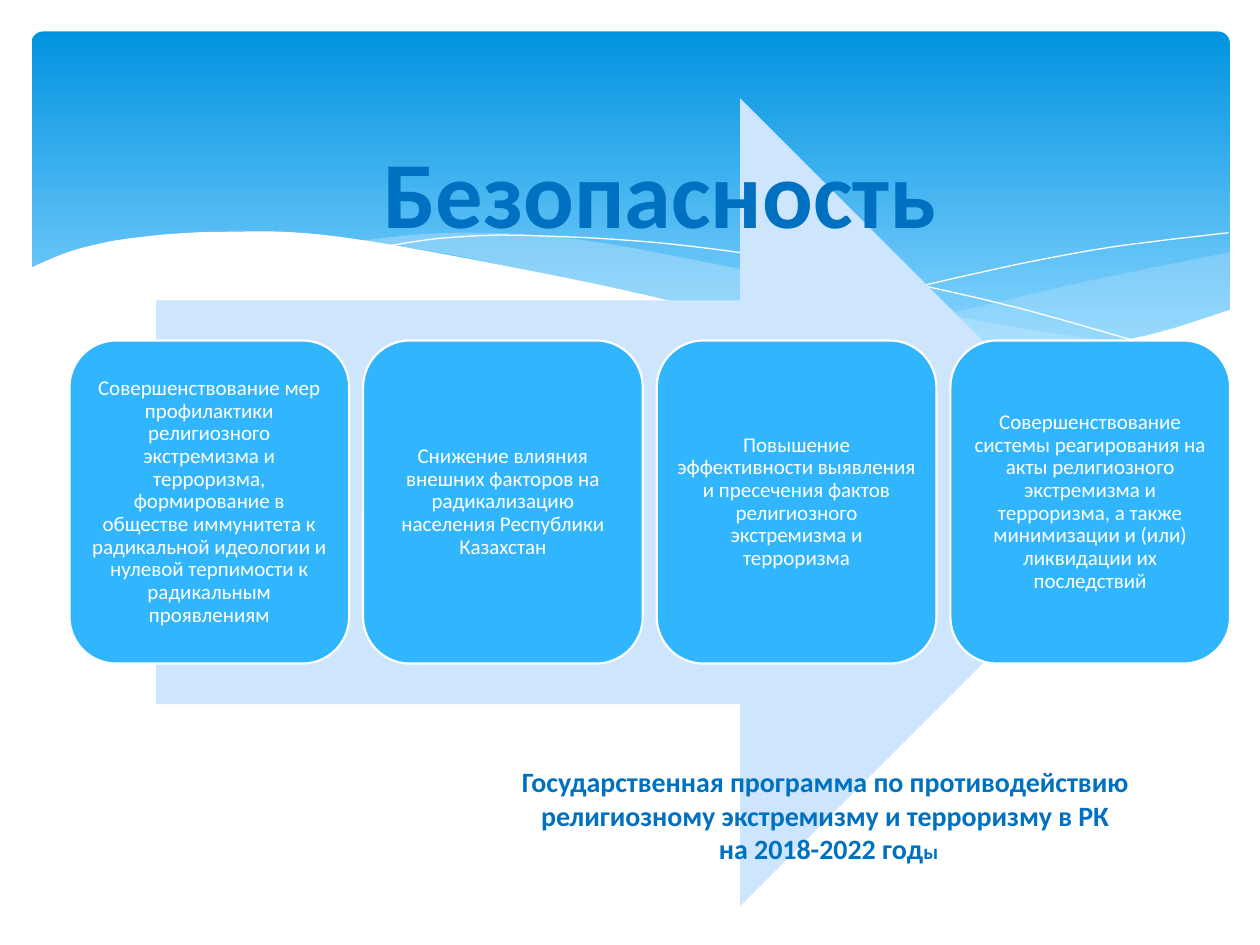
"""Build the slide on security measures: wave banner, arrow with four goals, programme name."""
from lxml import etree
from pptx import Presentation
from pptx.dml.color import RGBColor
from pptx.enum.shapes import MSO_SHAPE
from pptx.enum.text import MSO_ANCHOR, PP_ALIGN
from pptx.oxml.ns import qn
from pptx.util import Pt

ROUNDED = MSO_SHAPE.ROUNDED_RECTANGLE
ARROW = MSO_SHAPE.RIGHT_ARROW
MIDDLE = MSO_ANCHOR.MIDDLE
CENTER = PP_ALIGN.CENTER
WHITE, TEXT_BLUE, CARD_BLUE, ARROW_BLUE, WAVE_BLUE = "FFFFFF", "0070C0", "31B6FD", "CEE5FE", "C6E7FC"
BANNER_TOP, BANNER_BOTTOM = "0293E0", "83D3FE"
STEPS = 8
UNITS_PER_POINT = 10

color = RGBColor.from_string


def smooth_edge(knots):
    """Return a Catmull-Rom curve through the knots, in tenths of a point."""
    padded = [knots[0], *knots, knots[-1]]
    curve = [knots[0]]
    for before, start, end, after in zip(padded, padded[1:], padded[2:], padded[3:]):
        for step in range(1, STEPS + 1):
            t = step / STEPS
            curve.append([
                b + ((c - a) * t + (2 * a - 5 * b + 4 * c - d) * t**2 + (3 * b - a - 3 * c + d) * t**3) / 2
                for a, b, c, d in zip(before, start, end, after)])
    return [(round(x * UNITS_PER_POINT), round(y * UNITS_PER_POINT)) for x, y in curve]


def write_lines(frame, lines, hue, bold):
    """Fill a text frame with centred lines, each a list of (text, size) runs."""
    for index, pieces in enumerate(lines):
        paragraph = frame.add_paragraph() if index else frame.paragraphs[0]
        paragraph.alignment = CENTER
        for text, size in pieces:
            run = paragraph.add_run()
            run.text = text
            run.font.name = "Calibri"
            run.font.size = Pt(size)
            run.font.bold = bold
            run.font.color.rgb = color(hue)


prs = Presentation()
prs.slide_width, prs.slide_height = Pt(720), Pt(540)
slide = prs.slides.add_slide(prs.slide_layouts[6])
shapes = slide.shapes

banner = shapes.add_shape(ROUNDED, Pt(18), Pt(18), Pt(684.7), Pt(194.4))
banner.adjustments[0] = 0.034
banner.shadow.inherit = False
banner.line.fill.background()
banner.fill.gradient()
banner.fill.gradient_angle = 270
for stop, position, hue in zip(banner.fill.gradient_stops, (0, 0.9), (BANNER_TOP, BANNER_BOTTOM)):
    stop.position = position
    stop.color.rgb = color(hue)

right_top = [(703, 144), (620, 161), (542, 179), (476, 191)]
right_bottom = [(476, 191), (536, 198), (586, 200), (640, 196), (703, 178)]
middle_top = [(206, 137.5), (260, 133), (335, 137.5), (453, 160), (558, 183), (643, 196.5)]
middle_bottom = [(643, 196.5), (589, 200), (510, 196), (407, 178.5), (323, 160), (261, 146), (206, 137.5)]
falling_line = [(222, 140.5), (254, 136), (300, 134.5), (384, 139.5), (479, 153.5), (572, 173.5), (653, 196)]
rising_line = [(441, 185), (539, 160.5), (624, 143), (702, 133)]
white_crest = [
    (16.5, 153.5), (42.5, 143), (76, 136), (127, 132.5), (195, 135.5), (322, 158.5),
    (434, 183), (510, 194.5), (582, 199.5), (647, 193.5), (703.5, 177)]
white_base = [(703.5, 237), (16.5, 237)]

filled_waves = [
    ([right_top, right_bottom], WAVE_BLUE, 29),
    ([middle_top, middle_bottom], WAVE_BLUE, 40),
]
hairlines = [([falling_line], WHITE, 0), ([rising_line], WHITE, 0)]
white_ground = [([white_crest, white_base], WHITE, 100)]

for edges, hue, opacity in filled_waves + hairlines + white_ground:
    outline = [point for edge in edges for point in smooth_edge(edge)]
    builder = shapes.build_freeform(*outline[0], scale=Pt(1) / UNITS_PER_POINT)
    builder.add_line_segments(outline[1:], close=opacity > 0)
    wave = builder.convert_to_shape()
    wave.shadow.inherit = False
    if opacity:
        wave.line.fill.background()
        wave.fill.solid()
        wave.fill.fore_color.rgb = color(hue)
        tint = wave.element.spPr.find(qn("a:solidFill")).find(qn("a:srgbClr"))
        etree.SubElement(tint, qn("a:alpha"), val=str(opacity * 1000))
    else:
        wave.fill.background()
        wave.line.color.rgb = color(hue)
        wave.line.width = Pt(0)

arrow = shapes.add_shape(ARROW, Pt(89.3), Pt(56.2), Pt(564.5), Pt(461.5))
arrow.shadow.inherit = False
arrow.line.fill.background()
arrow.fill.solid()
arrow.fill.fore_color.rgb = color(ARROW_BLUE)

goals = [
    "Совершенствование мер профилактики религиозного экстремизма и терроризма, формирование "
    "в обществе иммунитета к радикальной идеологии и нулевой терпимости к радикальным проявлениям",
    "Снижение влияния внешних факторов на радикализацию населения Республики Казахстан",
    "Повышение эффективности выявления и пресечения фактов религиозного экстремизма и терроризма",
    "Совершенствование системы реагирования на акты религиозного экстремизма и терроризма, "
    "а также минимизации и (или) ликвидации их последствий",
]
cards_left, card_width, card_gap = 39.7, 159.8, 8
for index, goal in enumerate(goals):
    left = cards_left + index * (card_width + card_gap)
    card = shapes.add_shape(ROUNDED, Pt(left), Pt(194.6), Pt(card_width), Pt(184.6))
    card.shadow.inherit = False
    card.fill.solid()
    card.fill.fore_color.rgb = color(CARD_BLUE)
    card.line.color.rgb = color(WHITE)
    card.line.width = Pt(1.25)
    frame = card.text_frame
    frame.word_wrap = True
    frame.vertical_anchor = MIDDLE
    frame.margin_left = frame.margin_right = frame.margin_top = frame.margin_bottom = Pt(3.6)
    write_lines(frame, [[(goal, 12)]], WHITE, False)
    frame.paragraphs[0].line_spacing = 0.9
    frame.paragraphs[0].space_after = Pt(4.2)

title = shapes.add_textbox(Pt(163), Pt(73.2), Pt(428.4), Pt(72.7)).text_frame
title.word_wrap = False
write_lines(title, [[("Безопасность", 54)]], TEXT_BLUE, True)

programme = shapes.add_textbox(Pt(236.2), Pt(433.4), Pt(474.5), Pt(65.5)).text_frame
programme.word_wrap = True
programme_lines = [
    [("Государственная программа по противодействию ", 16)],
    [("религиозному экстремизму и терроризму в РК ", 16)],
    [("на 2018-2022 год", 16), ("ы", 12)],
]
write_lines(programme, programme_lines, TEXT_BLUE, True)

prs.save("out.pptx")
